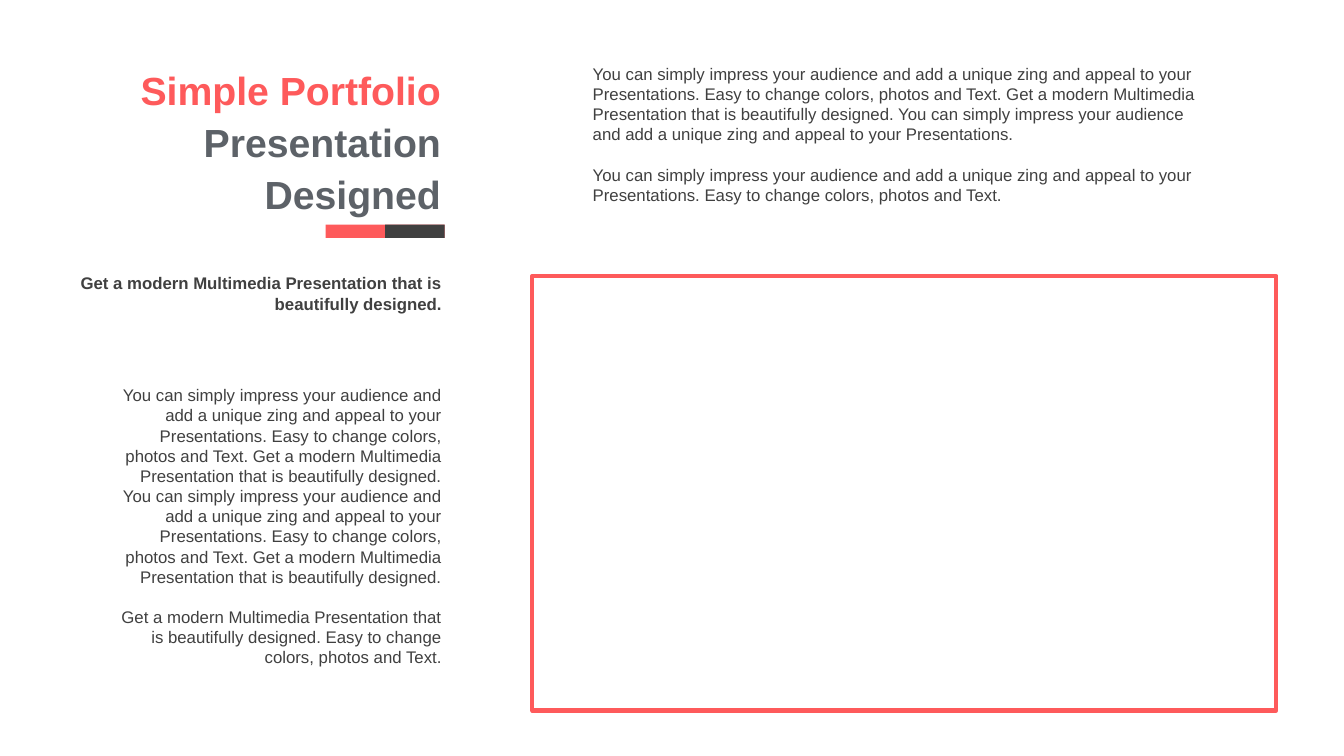
from typing import NamedTuple

from pptx import Presentation
from pptx.dml.color import RGBColor
from pptx.enum.shapes import MSO_SHAPE as Preset
from pptx.enum.text import MSO_ANCHOR as Anchor, MSO_AUTO_SIZE as AutoSize, PP_ALIGN as Align
from pptx.util import Inches, Pt

CORAL, SLATE, CHARCOAL = "FE5A5B", "5D6268", "404040"
FONT = "Arial"
BLANK_LAYOUT = 6

PITCH = ("You can simply impress your audience and add a unique zing and appeal "
         "to your Presentations.")
EASY = "Easy to change colors, photos and Text."
MODERN = "Get a modern Multimedia Presentation that is beautifully designed."
FULL_PITCH = f"{PITCH} {EASY} {MODERN}"


class Area(NamedTuple):
    """Left, top, width and height in percent of the slide's size."""
    left: float
    top: float
    width: float
    height: float


class Block(NamedTuple):
    """A text block whose paragraphs are lists of (text, colour) runs."""
    area: Area
    paragraphs: list[list[tuple[str, str]]]
    style: dict


class Box(NamedTuple):
    area: Area
    fill: str | None = None
    outline: str | None = None


ACCENT = Area(24.23, 29.73, 8.85, 1.73)
ACCENT_END = ACCENT._replace(left=ACCENT.left + ACCENT.width / 2, width=ACCENT.width / 2)

BOXES = [
    Box(Area(39.61, 36.53, 55.36, 57.47), outline=CORAL),
    Box(ACCENT, fill=CORAL),
    Box(ACCENT_END, fill=CHARCOAL),
]

BLOCKS = [
    Block(Area(8.18, 7.73, 25.36, 21.47),
          [[("Simple Portfolio ", CORAL), ("Presentation Designed", SLATE)]],
          dict(size=28, bold=True, align=Align.RIGHT, anchor=Anchor.MIDDLE,
               line_spacing=1.1, before=5.6, grow=False)),
    Block(Area(5.1, 35.47, 28.51, 6.67),
          [[(MODERN, CHARCOAL)]],
          dict(bold=True, align=Align.RIGHT)),
    Block(Area(8.18, 50.27, 25.43, 39.07),
          [[(f"{FULL_PITCH} {FULL_PITCH}", CHARCOAL)], [(f"{MODERN} {EASY}", CHARCOAL)]],
          dict(align=Align.RIGHT)),
    Block(Area(43.36, 7.73, 47.79, 20.13),
          [[(f"{FULL_PITCH} {PITCH}", CHARCOAL)], [(f"{PITCH} {EASY}", CHARCOAL)]],
          dict(align=Align.LEFT)),
]

deck = Presentation()
deck.slide_width, deck.slide_height = Inches(13.33), Inches(7.5)
slide = deck.slides.add_slide(deck.slide_layouts[BLANK_LAYOUT])


def colour(code: str) -> RGBColor:
    return RGBColor.from_string(code)


def place(area: Area) -> tuple[int, int, int, int]:
    """Turn percentages into slide lengths."""
    across, down = deck.slide_width / 100, deck.slide_height / 100
    return (round(area.left * across), round(area.top * down),
            round(area.width * across), round(area.height * down))


def draw_box(box: Box) -> None:
    rectangle = slide.shapes.add_shape(Preset.RECTANGLE, *place(box.area))
    rectangle.shadow.inherit = False
    if box.fill:
        rectangle.fill.solid()
        rectangle.fill.fore_color.rgb = colour(box.fill)
    else:
        rectangle.fill.background()
    if box.outline:
        rectangle.line.color.rgb = colour(box.outline)
        rectangle.line.width = Pt(3)
    else:
        rectangle.line.fill.background()


def draw_text(area: Area, paragraphs: list[list[tuple[str, str]]], *, align: Align,
              size: float = 12, bold: bool = False, anchor: Anchor = Anchor.TOP,
              line_spacing: float = 1.0, before: float = 0, gap: float = 14.4,
              grow: bool = True) -> None:
    """Write paragraphs; gap separates them, before precedes the first."""
    frame = slide.shapes.add_textbox(*place(area)).text_frame
    frame.word_wrap = True
    frame.vertical_anchor = anchor
    frame.auto_size = AutoSize.SHAPE_TO_FIT_TEXT if grow else AutoSize.NONE
    for index, runs in enumerate(paragraphs):
        paragraph = frame.add_paragraph() if index else frame.paragraphs[0]
        paragraph.alignment = align
        paragraph.line_spacing = line_spacing
        paragraph.space_before = Pt(gap if index else before)
        for words, code in runs:
            run = paragraph.add_run()
            run.text = words
            run.font.name = FONT
            run.font.size = Pt(size)
            run.font.bold = bold
            run.font.color.rgb = colour(code)


def main() -> None:
    for box in BOXES:
        draw_box(box)
    for block in BLOCKS:
        draw_text(block.area, block.paragraphs, **block.style)
    deck.save("out.pptx")


if __name__ == "__main__":
    main()
